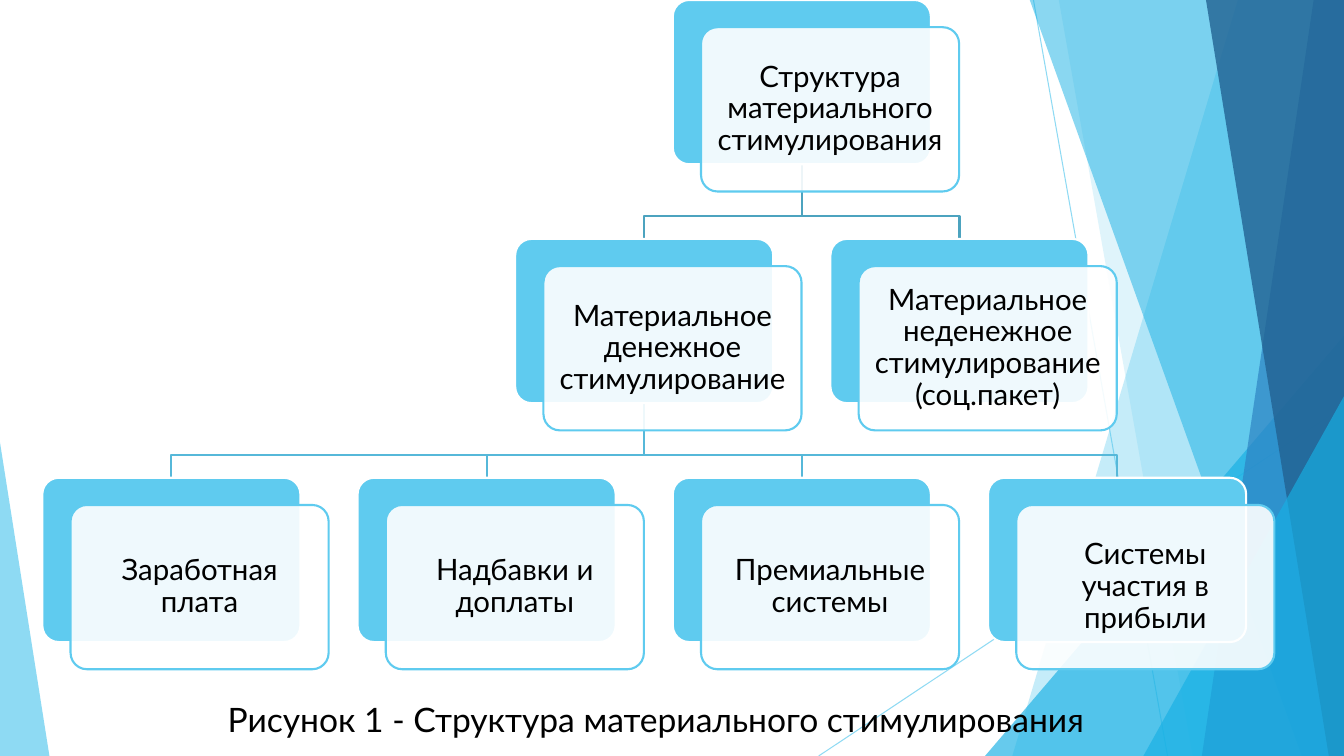
import pptx
import pptx.util
import pptx.dml.color
import pptx.enum.shapes
import pptx.enum.text
import pptx.oxml
import pptx.oxml.ns

Inches = pptx.util.Inches
Pt = pptx.util.Pt
KIND = pptx.enum.shapes.MSO_SHAPE
ALIGN = pptx.enum.text.PP_ALIGN
ANCHOR = pptx.enum.text.MSO_ANCHOR

WIDE, HIGH = 13.33, 7.5
SKY, AQUA, BLUE, NAVY, WHITE = "5FCBEF", "17B0E4", "2E83C3", "226292", "FFFFFF"

# Chart grid: column and level steps, card size, offset of the front card
LEFT, COL, ROW = 0.42, (9.8 - 0.42) / 3, 2.37
CARD_W, CARD_H = 2.56, 1.63
SHIFT_X, SHIFT_Y = 0.28, 0.27
BEND = 0.51

# Text, column, level
CARDS = [
    ("Структура материального стимулирования", 2, 0),
    ("Материальное денежное стимулирование", 1.5, 1),
    ("Материальное неденежное стимулирование (соц.пакет)", 2.5, 1),
    ("Заработная плата", 0, 2),
    ("Надбавки и доплаты", 1, 2),
    ("Премиальные системы", 2, 2),
    ("Системы участия в прибыли", 3, 2),
]
# Parent column, parent level, child columns, colour
LINKS = [
    (2, 0, (2.5, 1.5), "4CA3BF"),
    (1.5, 1, (3, 2, 1, 0), "56B8D9"),
]


def color(code):
    return pptx.dml.color.RGBColor.from_string(code)


def fade(shape, share):
    """Set the opacity, in percent, of the first colour of a shape."""
    tint = shape.element.spPr.find(".//" + pptx.oxml.ns.qn("a:srgbClr"))
    alpha = tint.makeelement(pptx.oxml.ns.qn("a:alpha"), {"val": str(share * 1000)})
    tint.append(alpha)


def paint(shape, fill=None, line=None, alpha=None):
    shape.shadow.inherit = False
    if fill:
        shape.fill.solid()
        shape.fill.fore_color.rgb = color(fill)
    else:
        shape.fill.background()
    if line:
        shape.line.color.rgb = color(line)
        shape.line.width = Pt(1.5)
    else:
        shape.line.fill.background()
    if alpha:
        fade(shape, alpha)


def write(frame, text, size=21, align=ALIGN.LEFT, space=1.0):
    para = frame.paragraphs[0]
    para.alignment = align
    para.line_spacing = space
    run = para.add_run()
    run.text = text
    run.font.name = "Lato"
    run.font.size = Pt(size)
    run.font.color.rgb = color("000000")


def block(slide, kind, x, y, w, h, adj, **look):
    shape = slide.shapes.add_shape(kind, Inches(x), Inches(y), Inches(w), Inches(h))
    shape.adjustments[0] = adj
    paint(shape, **look)
    return shape


def outline(slide, points, close, **look):
    spots = [(Inches(x), Inches(y)) for x, y in points]
    pen = slide.shapes.build_freeform(*spots[0])
    pen.add_line_segments(spots[1:], close=close)
    paint(pen.convert_to_shape(), **look)


def ray(slide, x1, y1, x2, y2):
    line = slide.shapes.add_connector(
        pptx.enum.shapes.MSO_CONNECTOR.STRAIGHT,
        Inches(x1), Inches(y1), Inches(x2), Inches(y2))
    line.line.color.rgb = color(SKY)
    line.line.width = Pt(0.75)
    fade(line, 70)
    props = line.element.spPr
    props.append(props.makeelement(pptx.oxml.ns.qn("a:effectLst"), {}))


def band(slide, top, foot, fill, alpha):
    """Fill from a slanted edge to the right side of the slide."""
    points = [(top, -0.01), (WIDE, -0.01), (WIDE, HIGH), (foot, HIGH)]
    outline(slide, points, True, fill=fill, alpha=alpha)


def wedge(slide, x, y, w, tip, fill, alpha):
    """Place a right triangle on the bottom edge of the slide."""
    block(slide, KIND.ISOSCELES_TRIANGLE, x, y, w, HIGH - y, tip,
          fill=fill, alpha=alpha)


def facets(slide):
    ray(slide, 10.25, 0, 11.58, HIGH)
    ray(slide, WIDE, 4.03, 8.12, HIGH)
    band(slide, 12.28, 10.04, SKY, 36)
    band(slide, 10.5, 11.83, SKY, 20)
    wedge(slide, 9.77, 3.33, 3.56, 1, AQUA, 66)
    band(slide, 10.21, 12.91, AQUA, 50)
    band(slide, 13.03, 11.92, BLUE, 70)
    band(slide, 11.96, 13.18, NAVY, 80)
    wedge(slide, 11.34, 3.93, 1.99, 1, AQUA, 66)
    wedge(slide, 0, 4.39, 0.49, 0, SKY, 70)


def link(slide, start, level, end, tone):
    x1, x2 = (LEFT + col * COL + CARD_W / 2 for col in (start, end))
    y1 = level * ROW + CARD_H
    mid = y1 + BEND
    points = [(x1, y1), (x1, mid), (x2, mid), (x2, (level + 1) * ROW)]
    outline(slide, points, False, line=tone)


def card(slide, text, col, level):
    x, y = LEFT + col * COL, level * ROW
    block(slide, KIND.ROUNDED_RECTANGLE, x, y, CARD_W, CARD_H, 0.1,
          fill=SKY, line=WHITE)
    front = block(slide, KIND.ROUNDED_RECTANGLE, x + SHIFT_X, y + SHIFT_Y,
                  CARD_W, CARD_H, 0.1, fill=WHITE, line=SKY, alpha=90)
    frame = front.text_frame
    frame.word_wrap = True
    frame.vertical_anchor = ANCHOR.MIDDLE
    # The rounded corners already inset the text a little
    frame.margin_left = frame.margin_right = Inches(0.08)
    frame.margin_top = frame.margin_bottom = Inches(0.08)
    write(frame, text, align=ALIGN.CENTER, space=0.9)


def caption(slide, text):
    box = slide.shapes.add_textbox(Inches(2.16), Inches(6.88), Inches(8.74), Inches(0.5))
    box.text_frame.word_wrap = False
    box.text_frame.auto_size = pptx.enum.text.MSO_AUTO_SIZE.SHAPE_TO_FIT_TEXT
    write(box.text_frame, text, size=24)


def main():
    deck = pptx.Presentation()
    deck.slide_width, deck.slide_height = Inches(WIDE), Inches(HIGH)
    slide = deck.slides.add_slide(deck.slide_layouts[6])

    # Backdrop
    facets(slide)

    # Tree
    for start, level, ends, tone in LINKS:
        for end in ends:
            link(slide, start, level, end, tone)
    for text, col, level in CARDS:
        card(slide, text, col, level)

    # Caption
    caption(slide, "Рисунок 1 - Структура материального стимулирования")
    deck.save("out.pptx")


if __name__ == "__main__":
    main()
